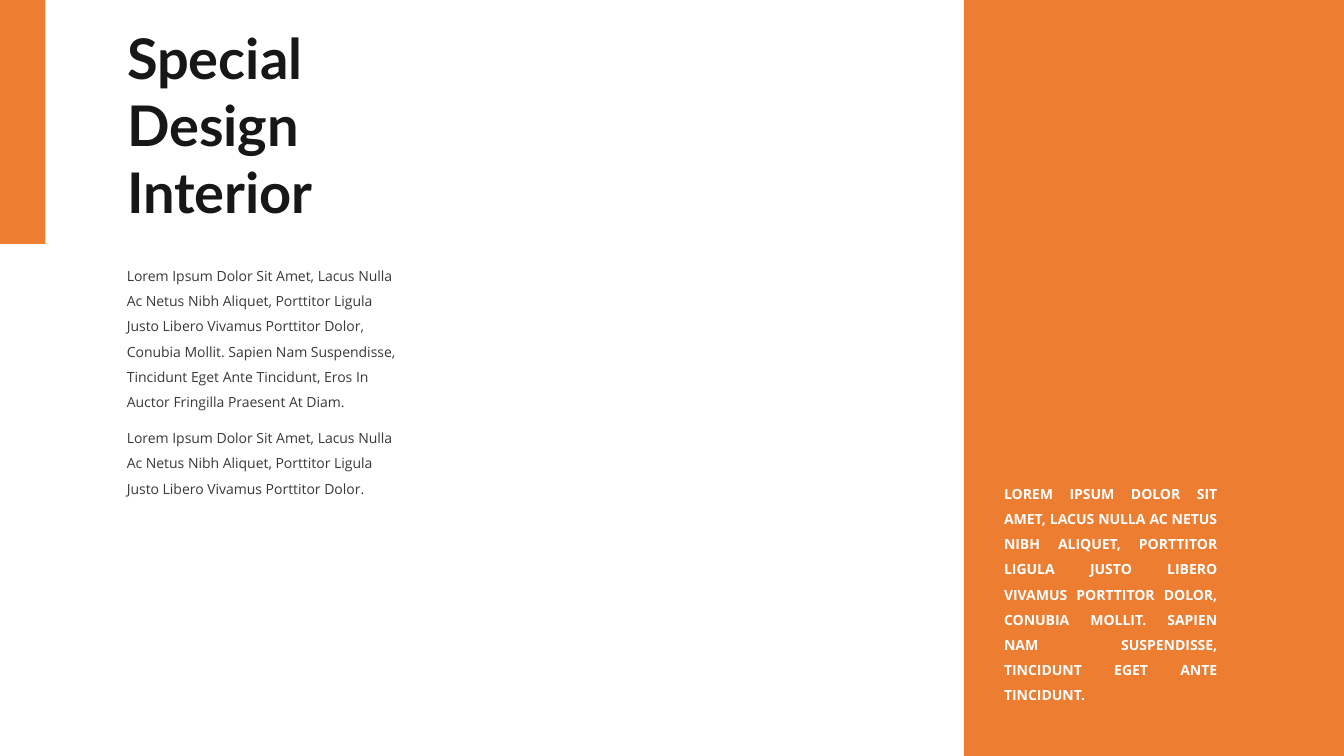
from pptx import Presentation
from pptx.dml.color import RGBColor
from pptx.enum.shapes import MSO_SHAPE
from pptx.enum.text import MSO_ANCHOR, MSO_AUTO_SIZE, PP_ALIGN
from pptx.util import Inches, Pt

RECT = MSO_SHAPE.RECTANGLE
TOP = MSO_ANCHOR.TOP
FIXED = MSO_AUTO_SIZE.NONE
LEFT, JUST = PP_ALIGN.LEFT, PP_ALIGN.JUSTIFY

WIDE, HIGH = 13.33, 7.5
EDGE = 1.16
SPLIT = 9.56
ORANGE, WHITE, DARK, GREY = "ED7D31", "FFFFFF", "181717", "3B3838"

TITLE = "Special Design Interior"
START = "Lorem Ipsum Dolor Sit Amet, Lacus Nulla Ac Netus Nibh Aliquet, Porttitor Ligula Justo Libero Vivamus Porttitor Dolor"
LONG = START + ", Conubia Mollit. Sapien Nam Suspendisse, Tincidunt Eget Ante Tincidunt"
BANDS = [
    (SPLIT, 0, WIDE - SPLIT, HIGH),
    (0, 0, 0.45, 2.42),
]
NOTES = [
    (LONG.upper() + ".", (SPLIT + 0.3, 4.68, 2.31, 2.37), WHITE, True, JUST),
    (LONG + ", Eros In Auctor Fringilla Praesent At Diam.", (EDGE, 2.52, 2.97, 1.62), GREY, False, LEFT),
    (START + ".", (EDGE, 4.13, 2.97, 0.86), GREY, False, LEFT),
]


def paint(tone):
    return RGBColor.from_string(tone)


def place(box):
    return [Inches(part) for part in box]


def write(shape, text, face, size, tone, bold, align, space):
    frame = shape.text_frame
    frame.text = text
    frame.word_wrap = True
    frame.auto_size = FIXED
    frame.vertical_anchor = TOP
    para = frame.paragraphs[0]
    para.alignment = align
    para.line_spacing = space
    font = para.runs[0].font
    font.name, font.size, font.bold = face, Pt(size), bold
    font.color.rgb = paint(tone)


deck = Presentation()
deck.slide_width, deck.slide_height = Inches(WIDE), Inches(HIGH)
slide = deck.slides.add_slide(deck.slide_layouts[5])
shapes = slide.shapes

for box in BANDS:
    band = shapes.add_shape(RECT, *place(box))
    band.shadow.inherit = False
    band.fill.solid()
    band.fill.fore_color.rgb = paint(ORANGE)
    band.line.fill.background()

title = shapes.title
title.left, title.top, title.width, title.height = place((EDGE, 0.18, 3.26, 2.12))
write(title, TITLE, "Lato", 40, DARK, True, LEFT, 1.0)

for text, box, tone, bold, align in NOTES:
    note = shapes.add_textbox(*place(box))
    write(note, text, "Open Sans", 10, tone, bold, align, 1.5)

deck.save("out.pptx")
